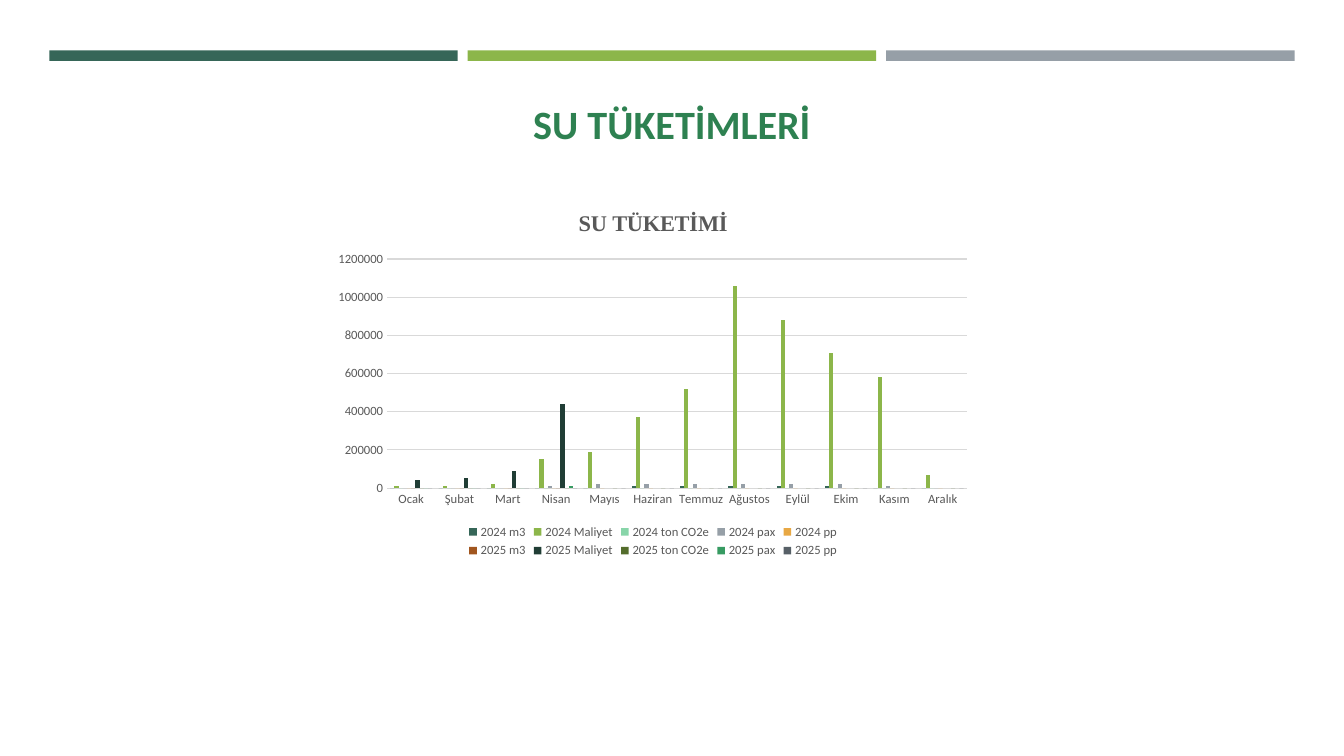
from dataclasses import dataclass

from lxml.etree import SubElement
from pptx import Presentation
from pptx.chart.data import CategoryChartData
from pptx.dml.color import RGBColor as Color
from pptx.enum.chart import XL_CHART_TYPE as ChartType
from pptx.enum.chart import XL_LEGEND_POSITION as LegendPosition
from pptx.enum.chart import XL_TICK_MARK as TickMark
from pptx.enum.shapes import MSO_SHAPE as Shape
from pptx.enum.text import MSO_ANCHOR as Anchor
from pptx.enum.text import PP_ALIGN as Align
from pptx.oxml.ns import qn
from pptx.util import Pt


@dataclass(frozen=True)
class Theme:
    bars: tuple = ("366658", "8CB64A", "969FA7")
    series: tuple = ("366658", "8CB64A", "88D5A9", "969FA7", "E8A844",
                     "A1561F", "203D35", "546D2C", "379B62", "576067")
    heading: str = "2E8151"
    text: str = "595959"
    grid: str = "D9D9D9"
    body_font: str = "Calibri"
    chart_title_font: str = "Times New Roman"
    heading_size: float = 28.7
    chart_title_size: float = 16
    label_size: float = 9


THEME = Theme()

MONTHS = ["Ocak", "Şubat", "Mart", "Nisan", "Mayıs", "Haziran",
          "Temmuz", "Ağustos", "Eylül", "Ekim", "Kasım", "Aralık"]
ZEROS = [0] * 12
NO_DATA = [None] * 8
CONSUMPTION = {
    "2024 m3": [0] * 5 + [10000] * 5 + [0] * 2,
    "2024 Maliyet": [10000, 10000, 20000, 150000, 190000, 370000, 520000,
                     1060000, 880000, 710000, 580000, 70000],
    "2024 ton CO2e": ZEROS,
    "2024 pax": [0] * 3 + [10000] + [20000] * 6 + [10000, 0],
    "2024 pp": ZEROS,
    "2025 m3": [0] * 4 + NO_DATA,
    "2025 Maliyet": [40000, 50000, 90000, 440000] + NO_DATA,
    "2025 ton CO2e": ZEROS,
    "2025 pax": [0, 0, 0, 10000] + NO_DATA,
    "2025 pp": ZEROS,
}


def apply_format(target, values):
    for name, value in values.items():
        setattr(target, name, value)


def format_font(font, size, color, name=THEME.body_font, bold=False):
    apply_format(font, {"size": Pt(size), "name": name, "bold": bold})
    font.color.rgb = Color.from_string(color)


def add_bars(slide, left, top, width, height, gap=7.2):
    """Three equal colour bars across the top."""
    bar_width = (width - gap * (len(THEME.bars) - 1)) / len(THEME.bars)
    for index, color in enumerate(THEME.bars):
        bar = slide.shapes.add_shape(
            Shape.RECTANGLE, Pt(left + index * (bar_width + gap)), Pt(top),
            Pt(bar_width), Pt(height))
        bar.shadow.inherit = False
        bar.fill.solid()
        bar.fill.fore_color.rgb = Color.from_string(color)
        bar.line.fill.background()


def add_heading(slide, left, top, width, height):
    """Slide title in its placeholder."""
    title = slide.shapes.title
    apply_format(title, {"left": Pt(left), "top": Pt(top),
                         "width": Pt(width), "height": Pt(height)})
    frame = title.text_frame
    frame.text = "SU TÜKETİMLERİ"
    apply_format(frame, {"vertical_anchor": Anchor.TOP, "word_wrap": True})
    paragraph = frame.paragraphs[0]
    paragraph.alignment = Align.CENTER
    format_font(paragraph.runs[0].font, THEME.heading_size, THEME.heading,
                bold=True)


def set_plot_layout(chart, x, y, w, h):
    """Fix the inner plot area as fractions of the chart."""
    plot_area = chart.plots[0]._element.getparent()
    layout = plot_area.find(qn("c:layout"))
    if layout is None:
        layout = SubElement(plot_area, qn("c:layout"))
        plot_area.insert(0, layout)
    manual = SubElement(layout, qn("c:manualLayout"))
    settings = {"layoutTarget": "inner", "xMode": "edge", "yMode": "edge",
                "x": x, "y": y, "w": w, "h": h}
    for name, value in settings.items():
        SubElement(manual, qn(f"c:{name}")).set("val", str(value))


def add_consumption_chart(slide, left, top, width, height):
    """Monthly water use, clustered by measure and year."""
    data = CategoryChartData()
    data.categories = MONTHS
    for name, values in CONSUMPTION.items():
        data.add_series(name, values)
    chart = slide.shapes.add_chart(
        ChartType.COLUMN_CLUSTERED, Pt(left), Pt(top), Pt(width), Pt(height),
        data).chart
    format_font(chart.font, THEME.label_size, THEME.text)

    # Chart title
    chart.has_title = True
    frame = chart.chart_title.text_frame
    frame.text = "SU TÜKETİMİ"
    format_font(frame.paragraphs[0].runs[0].font, THEME.chart_title_size,
                THEME.text, THEME.chart_title_font, True)
    chart.chart_title.include_in_layout = False

    # Columns
    plot = chart.plots[0]
    apply_format(plot, {"gap_width": 150, "overlap": 0,
                        "vary_by_categories": False})
    for series, color in zip(plot.series, THEME.series):
        series.format.fill.solid()
        series.format.fill.fore_color.rgb = Color.from_string(color)
        series.invert_if_negative = False
    set_plot_layout(chart, 0.094, 0.18, 0.885, 0.62)

    # Axes
    for axis in (chart.category_axis, chart.value_axis):
        apply_format(axis, {"major_tick_mark": TickMark.NONE,
                            "minor_tick_mark": TickMark.NONE})
        axis.format.line.fill.background()
        format_font(axis.tick_labels.font, THEME.label_size, THEME.text)
    value_axis = chart.value_axis
    apply_format(value_axis, {"minimum_scale": 0, "maximum_scale": 1200000,
                              "major_unit": 200000,
                              "has_major_gridlines": True})
    grid_line = value_axis.major_gridlines.format.line
    grid_line.width = Pt(0.75)
    grid_line.color.rgb = Color.from_string(THEME.grid)
    apply_format(value_axis.tick_labels, {"number_format": "0",
                                          "number_format_is_linked": False})

    # Legend
    chart.has_legend = True
    apply_format(chart.legend, {"position": LegendPosition.BOTTOM,
                                "include_in_layout": False})
    format_font(chart.legend.font, THEME.label_size, THEME.text)


def build_consumption_slide(presentation):
    slide = presentation.slides.add_slide(presentation.slide_layouts[5])
    add_bars(slide, 35.2, 36, 889.5, 7.5)
    add_heading(slide, 66, 67.5, 828, 65.5)
    add_consumption_chart(slide, 232.5, 137.5, 468, 264)


def main():
    presentation = Presentation()
    apply_format(presentation, {"slide_width": Pt(960),
                                "slide_height": Pt(540)})
    build_consumption_slide(presentation)
    presentation.save("out.pptx")


if __name__ == "__main__":
    main()
